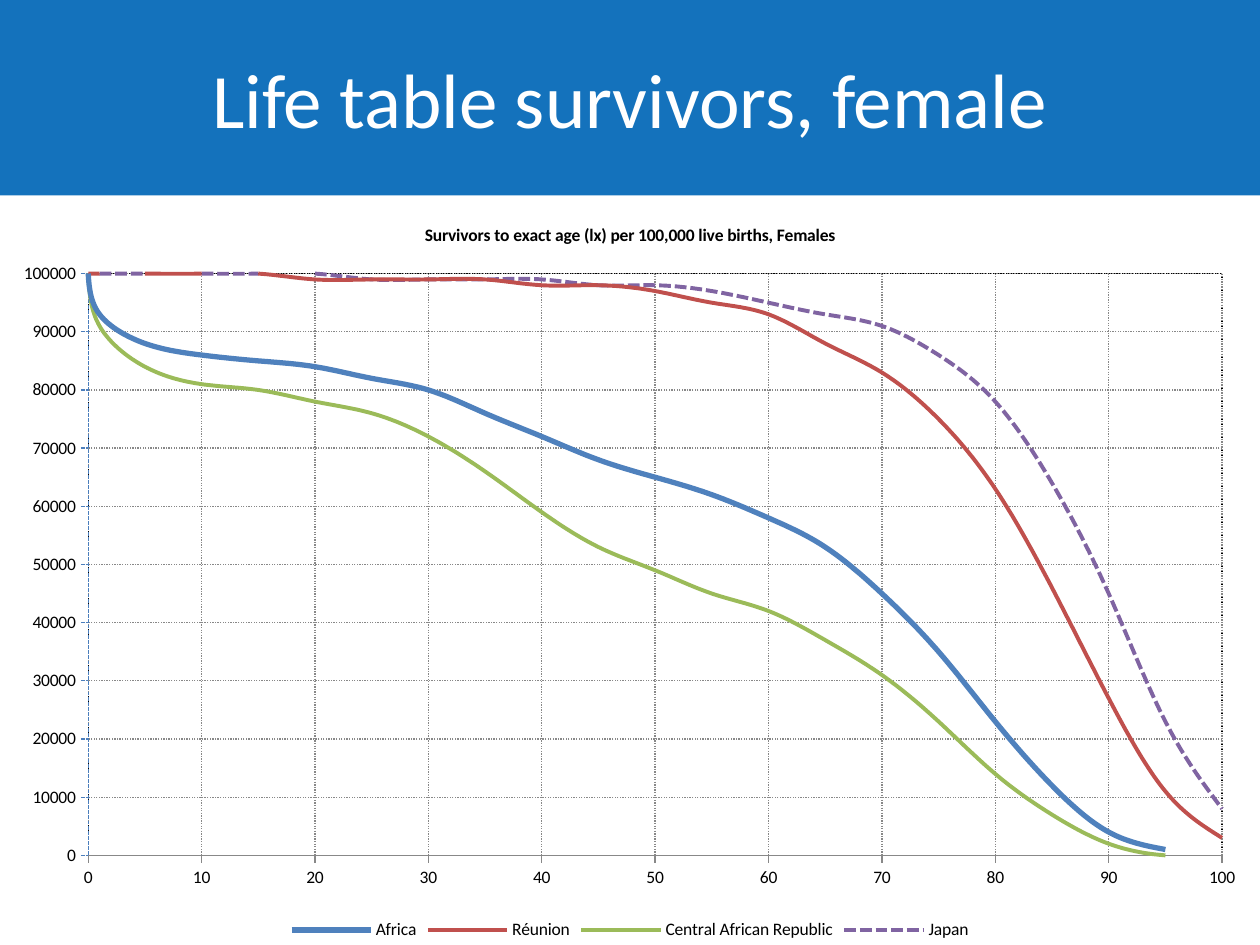
from lxml import etree
from pptx import Presentation
from pptx.chart.data import XyChartData
from pptx.dml.color import RGBColor
from pptx.enum.chart import XL_CHART_TYPE, XL_LEGEND_POSITION, XL_TICK_MARK
from pptx.enum.dml import MSO_LINE
from pptx.enum.shapes import MSO_SHAPE
from pptx.enum.text import MSO_ANCHOR, PP_ALIGN
from pptx.oxml import parse_xml
from pptx.oxml.ns import nsdecls, qn
from pptx.util import Inches, Pt

SMOOTH_SCATTER = XL_CHART_TYPE.XY_SCATTER_SMOOTH_NO_MARKERS
BOTTOM = XL_LEGEND_POSITION.BOTTOM
TICK_OUTSIDE = XL_TICK_MARK.OUTSIDE
TICK_NONE = XL_TICK_MARK.NONE
SOLID = MSO_LINE.SOLID
DOTTED, FINE_DASH = MSO_LINE.ROUND_DOT, MSO_LINE.SQUARE_DOT
RECTANGLE = MSO_SHAPE.RECTANGLE
MIDDLE = MSO_ANCHOR.MIDDLE
CENTER = PP_ALIGN.CENTER

FONT = "Calibri"
AGES = [0, 1, *range(5, 101, 5)]
SURVIVORS_IN_THOUSANDS = {
    "Africa": [100, 93, 88, 86, 85, 84, 82, 80, 76, 72, 68,
               65, 62, 58, 53, 45, 35, 23, 12, 4, 1, None],
    "Réunion": [100, 100, 100, 100, 100, 99, 99, 99, 99, 98, 98,
                97, 95, 93, 88, 83, 75, 63, 46, 27, 11, 3],
    "Central African Republic": [100, 91, 84, 81, 80, 78, 76, 72, 66, 59, 53,
                                 49, 45, 42, 37, 31, 23, 14, 7, 2, 0, 0],
    "Japan": [100, 100, 100, 100, 100, 100, 99, 99, 99, 99, 98,
              98, 97, 95, 93, 91, 86, 78, 64, 45, 23, 8],
}
CURVE_STYLES = {
    "Africa": ("4F81BD", 3, SOLID),
    "Réunion": ("C0504D", 2.25, SOLID),
    "Central African Republic": ("9BBB59", 2.25, SOLID),
    "Japan": ("8064A2", 2.25, FINE_DASH),
}


def color(hex_value):
    return RGBColor.from_string(hex_value)


def apply_format(target, values):
    for name, value in values.items():
        setattr(target, name, value)


def style_line(line, hex_value, width, dash):
    line.color.rgb = color(hex_value)
    apply_format(line, {"width": Pt(width), "dash_style": dash})


def style_font(font, size, hex_value, bold=False):
    apply_format(font, {"name": FONT, "size": Pt(size), "bold": bold})
    font.color.rgb = color(hex_value)


def add_banner(slide, box):
    banner = slide.shapes.add_shape(RECTANGLE, *box)
    banner.shadow.inherit = False
    banner.fill.solid()
    banner.fill.fore_color.rgb = color("1472BC")
    banner.line.fill.background()
    frame = banner.text_frame
    apply_format(frame, {"word_wrap": True, "vertical_anchor": MIDDLE})
    heading = frame.paragraphs[0]
    heading.text = "Life table survivors, female"
    heading.alignment = CENTER
    style_font(heading.runs[0].font, 44, "FFFFFF")


def style_axis(axis, maximum, step, line_color, line_dash):
    apply_format(axis, {
        "minimum_scale": 0,
        "maximum_scale": maximum,
        "major_unit": step,
        "major_tick_mark": TICK_OUTSIDE,
        "minor_tick_mark": TICK_NONE,
        "has_major_gridlines": True,
    })
    apply_format(axis.tick_labels,
                 {"number_format": "General", "number_format_is_linked": False})
    style_line(axis.format.line, line_color, 0.75, line_dash)
    style_line(axis.major_gridlines.format.line, "888888", 0.75, DOTTED)


def style_curve(curve):
    style_line(curve.format.line, *CURVE_STYLES[curve.name])
    for smooth in curve._element.findall(qn("c:smooth")):
        smooth.set("val", "1")
    for point in list(curve._element.iter(qn("c:pt"))):
        if point.findtext(qn("c:v")) in ("None", ""):
            point.getparent().remove(point)


def frame_plot(chart, left, top, width, height):
    plot_area = chart.plots[0]._element.getparent()
    for layout in plot_area.findall(qn("c:layout")):
        plot_area.remove(layout)
    layout = etree.Element(qn("c:layout"))
    manual = etree.SubElement(layout, qn("c:manualLayout"))
    settings = {"layoutTarget": "inner", "xMode": "edge", "yMode": "edge",
                "x": left, "y": top, "w": width, "h": height}
    for name, value in settings.items():
        etree.SubElement(manual, qn(f"c:{name}")).set("val", str(value))
    plot_area.insert(0, layout)
    plot_area.append(parse_xml(
        f'<c:spPr {nsdecls("c", "a")}><a:noFill/><a:ln w="9525"><a:solidFill>'
        '<a:srgbClr val="000000"/></a:solidFill><a:prstDash val="sysDot"/>'
        '</a:ln></c:spPr>'))


def add_survivor_chart(slide, box):
    chart_data = XyChartData()
    for region, thousands in SURVIVORS_IN_THOUSANDS.items():
        curve = chart_data.add_series(region)
        for age, survivors in zip(AGES, thousands):
            curve.add_data_point(
                age, None if survivors is None else survivors * 1000)
    chart = slide.shapes.add_chart(SMOOTH_SCATTER, *box, chart_data).chart
    style_font(chart.font, 10, "000000")

    chart.has_title = True
    caption = chart.chart_title.text_frame.paragraphs[0]
    caption.text = "Survivors to exact age (lx) per 100,000 live births, Females"
    style_font(caption.runs[0].font, 10, "000000", bold=True)
    chart.has_legend = True
    apply_format(chart.legend, {"position": BOTTOM, "include_in_layout": False})

    style_axis(chart.category_axis, 100, 10, "888888", SOLID)
    style_axis(chart.value_axis, 100000, 10000, "4B7EBC", FINE_DASH)
    plot = chart.plots[0]
    plot.vary_by_categories = False
    for curve in plot.series:
        style_curve(curve)
    frame_plot(chart, 0.07, 0.1, 0.9, 0.78)


def main():
    presentation = Presentation()
    apply_format(presentation,
                 {"slide_width": Inches(10), "slide_height": Inches(7.5)})
    slide = presentation.slides.add_slide(presentation.slide_layouts[6])
    add_banner(slide, [Inches(n) for n in (0, 0, 10, 1.55)])
    add_survivor_chart(slide, [Inches(n) for n in (0, 1.58, 10, 5.92)])
    presentation.save("out.pptx")


if __name__ == "__main__":
    main()
